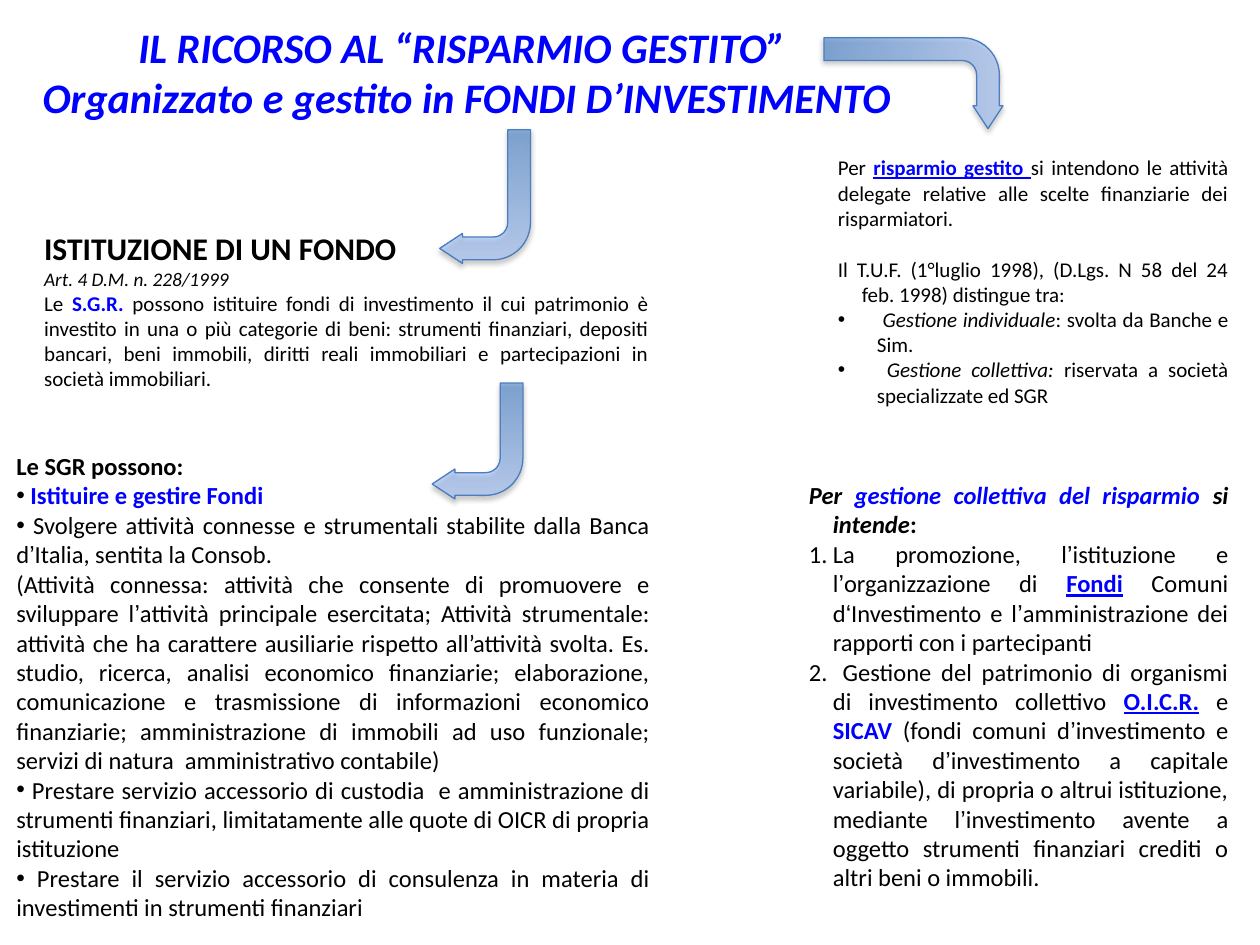
"""Build the slide on managed savings and investment funds."""
from dataclasses import dataclass
from typing import Optional

from lxml.etree import SubElement
from pptx import Presentation
from pptx.dml.color import RGBColor
from pptx.enum.shapes import MSO_SHAPE
from pptx.enum.text import MSO_ANCHOR as Anchor, MSO_AUTO_SIZE as AutoSize, PP_ALIGN as Align
from pptx.oxml.ns import qn
from pptx.util import Inches, Pt


@dataclass(frozen=True)
class Theme:
    """Colours, fonts and type sizes of the slide."""
    ink: str = "000000"
    blue: str = "0000FF"
    arrow_dark: str = "3F80CE"
    arrow_light: str = "A4C4FF"
    arrow_line: str = "4B7EBC"
    font: str = "Calibri"
    quote_font: str = "Arial"
    title: int = 24
    heading: int = 18
    large: int = 14
    small: int = 12
    note: int = 11


THEME = Theme()


@dataclass(frozen=True)
class Run:
    """A stretch of text with one format."""
    text: str
    blue: bool = False
    bold: bool = False
    italic: bool = False
    underline: bool = False
    font: str = THEME.font


@dataclass(frozen=True)
class Para:
    """A paragraph with its runs, bullet and hanging indent."""
    runs: list[Run]
    size: int
    bullet: Optional[str] = None
    hang: float = 0
    before: float = 0
    align: Align = Align.JUSTIFY


@dataclass(frozen=True)
class Box:
    """Left, top, width and height in inches."""
    left: float
    top: float
    width: float
    height: float


@dataclass(frozen=True)
class Arrow:
    """A bent arrow and its rotation in degrees."""
    box: Box
    rotation: int


def quoted(text: str) -> list[Run]:
    """Split text so that its curly quotes use the quote font."""
    spaced = text.replace("’", "|’|").replace("‘", "|‘|")
    return [Run(t, font=THEME.quote_font if t in "’‘" else THEME.font)
            for t in spaced.split("|")]


def key(text: str, underline: bool = False) -> Run:
    """Return a bold blue key term."""
    return Run(text, blue=True, bold=True, underline=underline)


def place(s, box: Box) -> None:
    """Move a shape to its box."""
    s.left, s.top = Inches(box.left), Inches(box.top)
    s.width, s.height = Inches(box.width), Inches(box.height)


def style(r, run: Run, size: int) -> None:
    """Format a run."""
    r.font.name, r.font.size = run.font, Pt(size)
    r.font.bold, r.font.italic, r.font.underline = run.bold, run.italic, run.underline
    r.font.color.rgb = RGBColor.from_string(THEME.blue if run.blue else THEME.ink)


def set_bullet(p, para: Para) -> None:
    """Set the hanging indent and the bullet of a paragraph."""
    pPr = p._p.get_or_add_pPr()
    pPr.set("marL", str(Inches(para.hang)))
    pPr.set("indent", str(-Inches(para.hang)))
    if para.bullet == "1.":
        SubElement(pPr, qn("a:buAutoNum"), type="arabicPeriod")
    elif para.bullet:
        SubElement(pPr, qn("a:buFont"), typeface=THEME.quote_font)
        SubElement(pPr, qn("a:buChar"), char=para.bullet)
    else:
        SubElement(pPr, qn("a:buNone"))


def fill_text(s, box: Box, paras: list[Para], wrap: bool = True) -> None:
    """Place a placeholder and write its paragraphs."""
    place(s, box)
    tf = s.text_frame
    tf.word_wrap, tf.auto_size = wrap, AutoSize.SHAPE_TO_FIT_TEXT
    tf.vertical_anchor = Anchor.TOP
    for i, para in enumerate(paras):
        p = tf.add_paragraph() if i else tf.paragraphs[0]
        p.alignment, p.line_spacing = para.align, 1.0
        p.space_before, p.space_after = Pt(para.before), Pt(0)
        set_bullet(p, para)
        for run in para.runs:
            r = p.add_run()
            r.text = run.text
            style(r, run, para.size)


def draw_arrow(shapes, arrow: Arrow) -> None:
    """Draw a bent arrow with a translucent gradient and a soft shadow."""
    s = shapes.add_shape(MSO_SHAPE.BENT_ARROW, 0, 0, 0, 0)
    place(s, arrow.box)
    s.rotation = arrow.rotation
    for i, value in enumerate((0.25, 0.165, 0.25, 0.411)):
        s.adjustments[i] = value
    s.fill.gradient()
    s.fill.gradient_angle = 90
    for stop, colour in zip(s.fill.gradient_stops, (THEME.arrow_dark, THEME.arrow_light)):
        stop.color.rgb = RGBColor.from_string(colour)
    spPr = s._element.spPr
    for clr in spPr.find(qn("a:gradFill")).iter(qn("a:srgbClr")):
        SubElement(clr, qn("a:alpha"), val="56000")
    s.line.color.rgb, s.line.width = RGBColor.from_string(THEME.arrow_line), Pt(0.75)
    s.shadow.inherit = False
    shadow = SubElement(spPr.find(qn("a:effectLst")), qn("a:outerShdw"), blurRad=str(Pt(3.1)),
                        dist=str(Pt(1.8)), dir="5400000", rotWithShape="0")
    clr = SubElement(shadow, qn("a:srgbClr"), val=THEME.ink)
    SubElement(clr, qn("a:alpha"), val="35000")


TITLE = [Para([Run(t, blue=True, bold=True, italic=True)], THEME.title, align=Align.CENTER)
         for t in ("IL RICORSO AL “RISPARMIO GESTITO” ",
                   "Organizzato e gestito in FONDI D’INVESTIMENTO")]

FUND = [
    Para([Run("ISTITUZIONE DI UN FONDO", bold=True)], THEME.heading, align=Align.LEFT),
    Para([Run("Art. 4 D.M. n. 228/1999", italic=True)], THEME.note, align=Align.LEFT),
    Para([Run("Le "), key("S.G.R. "), Run(
        "possono istituire fondi di investimento il cui patrimonio è investito in una o più "
        "categorie di beni: strumenti finanziari, depositi bancari, beni immobili, diritti reali "
        "immobiliari e partecipazioni in società immobiliari.")], THEME.small),
]

SGR = [
    Para([Run("Le SGR possono:", bold=True)], THEME.large),
    Para([Run(" "), key("Istituire e gestire Fondi")], THEME.large, "•"),
    Para(quoted(" Svolgere attività connesse e strumentali stabilite dalla Banca d’Italia, "
                "sentita la Consob. "), THEME.large, "•"),
    Para(quoted("(Attività connessa: attività che consente di promuovere e sviluppare l’") [:2] + [Run(
        "attività principale esercitata; Attività strumentale: attività che ha carattere "
        "ausiliarie rispetto all’attività svolta. Es. studio, ricerca, analisi economico "
        "finanziarie; elaborazione, comunicazione e trasmissione di informazioni economico "
        "finanziarie; amministrazione di immobili ad uso funzionale; servizi di natura  "
        "amministrativo contabile)")], THEME.large),
    Para([Run(" Prestare servizio accessorio di custodia  e amministrazione di strumenti "
              "finanziari, limitatamente alle quote di OICR di propria istituzione")],
         THEME.large, "•"),
    Para([Run(" Prestare il servizio accessorio di consulenza in materia di investimenti in "
              "strumenti finanziari")], THEME.large, "•"),
]

SAVINGS = [
    Para([Run("Per "), key("risparmio gestito ", True), Run(
        "si intendono le attività delegate relative alle scelte finanziarie dei "
        "risparmiatori. ")], THEME.small),
    Para([Run("Il T.U.F. (1°luglio 1998), (D.Lgs. N 58 del 24 feb. 1998) distingue tra:")],
         THEME.small, hang=0.19, before=14.6),
    Para([Run(" Gestione individuale", italic=True), Run(": svolta da Banche e Sim.")],
         THEME.small, "•", 0.31),
    Para([Run(" Gestione collettiva: ", italic=True),
          Run("riservata a società specializzate ed SGR")], THEME.small, "•", 0.31),
]

COLLECTIVE = [
    Para([Run("Per ", bold=True, italic=True),
          Run("gestione collettiva del risparmio ", blue=True, bold=True, italic=True),
          Run("si intende", bold=True, italic=True), Run(":", bold=True)], THEME.large, hang=0.19),
    Para([*quoted("La promozione, l’istituzione e l’organizzazione di "), key("Fondi", True),
          Run(" "), *quoted("Comuni d‘Investimento e l’amministrazione dei rapporti con i "
                            "partecipanti")], THEME.large, "1.", 0.19),
    Para([Run(" Gestione del patrimonio di organismi di investimento collettivo "),
          key("O.I.C.R.", True), Run(" e "), key("SICAV "),
          *quoted("(fondi comuni d’investimento e società d’investimento a capitale variabile), "
                  "di propria o altrui istituzione, mediante l’investimento avente a oggetto "
                  "strumenti finanziari crediti o altri beni o immobili.")],
         THEME.large, "1.", 0.19),
]

BODIES = {1: (Box(0.25, 1.77, 5, 1.4), FUND), 2: (Box(0.03, 3.53, 5.23, 3.87), SGR),
          3: (Box(6.55, 1.18, 3.3, 2.12), SAVINGS), 4: (Box(6.32, 3.76, 3.53, 3.4), COLLECTIVE)}

ARROWS = [Arrow(Box(3.49, 1.03, 0.72, 1.06), 180), Arrow(Box(6.89, -0.05, 0.72, 1.42), 90),
          Arrow(Box(3.43, 3.04, 0.72, 0.92), 180)]


def main() -> None:
    """Build and save the presentation."""
    prs = Presentation()
    prs.slide_width, prs.slide_height = Inches(10), Inches(7.5)
    slide = prs.slides.add_slide(prs.slide_layouts.get_by_name("Comparison"))
    fill_text(slide.shapes.title, Box(0.15, 0.12, 7.11, 0.91), TITLE, wrap=False)
    for idx, (box, paras) in BODIES.items():
        fill_text(slide.placeholders[idx], box, paras)
    for arrow in ARROWS:
        draw_arrow(slide.shapes, arrow)
    prs.save("out.pptx")


if __name__ == "__main__":
    main()
